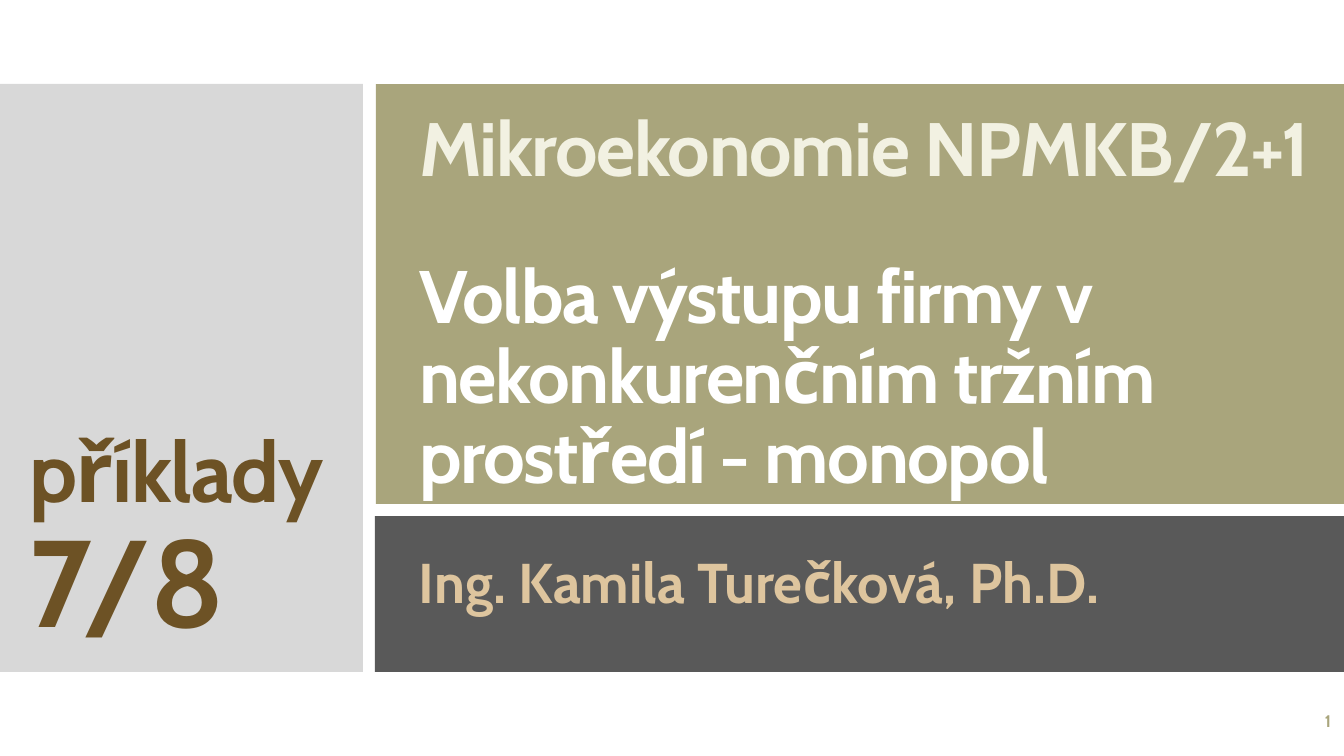
from pptx import Presentation
from pptx.dml.color import RGBColor
from pptx.enum.shapes import MSO_SHAPE
from pptx.enum.text import MSO_ANCHOR, MSO_AUTO_SIZE, PP_ALIGN
from pptx.util import Pt

RECTANGLE = MSO_SHAPE.RECTANGLE
TOP, MIDDLE, BOTTOM = MSO_ANCHOR.TOP, MSO_ANCHOR.MIDDLE, MSO_ANCHOR.BOTTOM
LEFT, RIGHT = PP_ALIGN.LEFT, PP_ALIGN.RIGHT
NO_AUTOFIT = MSO_AUTO_SIZE.NONE

PX = 9071  # EMU per px, at 100.8 px to the inch
THEME = {
    "font": "Cabin",
    "colors": {
        "gray": "D8D8D8", "olive": "A9A57C", "charcoal": "595959",
        "cream": "F2F1E2", "white": "FFFFFF", "sand": "DEC59E", "brown": "6D5225",
    },
    "sizes": {"course": 54, "topic": 53.1, "author": 40, "label": 60, "number": 88, "page": 12},
}


def color(name):
    return RGBColor.from_string(THEME["colors"][name])


def write(box, bounds, anchor, lines, align=LEFT, line_spacing=0.9, tracking=0):
    """Place a text shape and fill it with (text, size, color, space after) lines."""
    box.left, box.top, box.width, box.height = [value * PX for value in bounds]
    frame = box.text_frame
    frame.word_wrap = True
    frame.auto_size = NO_AUTOFIT
    frame.vertical_anchor = anchor
    frame.margin_left, frame.margin_right = 9 * PX, 3 * PX
    frame.margin_top = frame.margin_bottom = 4 * PX
    for index, (text, size, color_name, space_after) in enumerate(lines):
        para = frame.add_paragraph() if index else frame.paragraphs[0]
        para.text = text
        para.alignment = align
        para.line_spacing = line_spacing
        para.space_before, para.space_after = Pt(0), Pt(space_after)
        font = para.font
        font.name, font.bold = THEME["font"], True
        font.size = Pt(THEME["sizes"][size])
        font.color.rgb = color(color_name)
        font._rPr.set("spc", str(tracking))


deck = Presentation()
deck.slide_width, deck.slide_height = 1344 * PX, 756 * PX
page = deck.slides.add_slide(deck.slide_layouts[5])
shapes = page.shapes

for fill, bounds in (
    ("gray", (0, 84, 363, 588)),
    ("olive", (376, 84, 968, 420)),
    ("charcoal", (375, 516, 969, 156)),
):
    panel = shapes.add_shape(RECTANGLE, *[value * PX for value in bounds])
    panel.shadow.inherit = False
    panel.fill.solid()
    panel.fill.fore_color.rgb = color(fill)
    panel.line.fill.background()

title = shapes.title
shapes._spTree.append(title._element)  # bring the title in front of the panels
write(title, (410, 143, 914, 361), BOTTOM, [
    ("Mikroekonomie NPMKB/2+1", "course", "cream", 47),
    ("Volba výstupu firmy v nekonkurenčním tržním prostředí - monopol", "topic", "white", 0),
], tracking=-100)

for bounds, anchor, lines, align, line_spacing, tracking in (
    ((410, 551, 792, 85), TOP,
     [("Ing. Kamila Turečková, Ph.D.", "author", "sand", 0)], LEFT, 0.9, 0),
    ((20, 96, 323, 562), BOTTOM,
     [("příklady", "label", "brown", 0), ("7/8", "number", "brown", 0)], LEFT, 0.9, -100),
    ((1172, 701, 162, 40), MIDDLE, [("1", "page", "olive", 0)], RIGHT, 1.0, 0),
):
    write(shapes.add_textbox(0, 0, 0, 0), bounds, anchor, lines, align, line_spacing, tracking)

deck.save("out.pptx")
